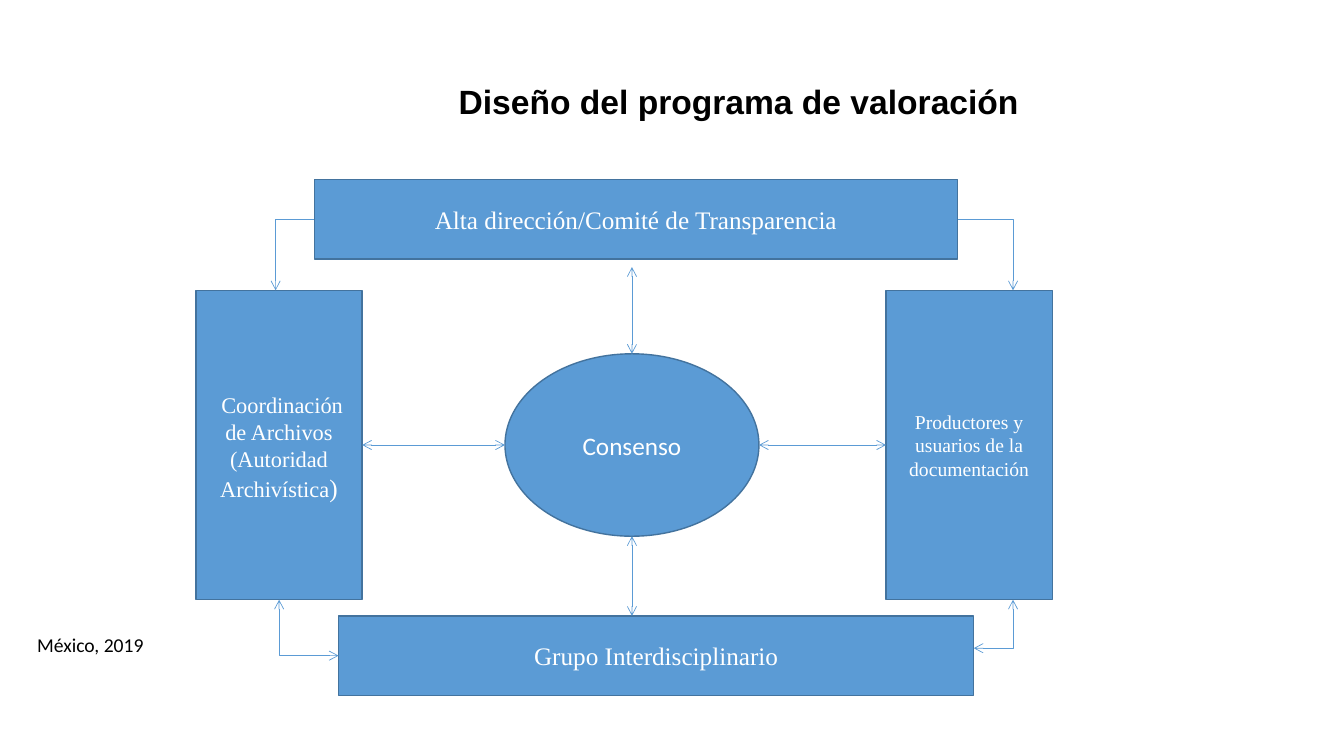
from lxml.etree import SubElement
from pptx import Presentation
from pptx.dml.color import RGBColor
from pptx.enum.shapes import MSO_CONNECTOR as Connector, MSO_SHAPE as Preset
from pptx.enum.text import MSO_ANCHOR as Anchor, MSO_AUTO_SIZE as AutoSize, PP_ALIGN as Align
from pptx.oxml.ns import qn
from pptx.util import Pt

COLORS = {"fill": "5B9BD5", "outline": "43739E", "light": "FFFFFF", "dark": "000000"}
SERIF = "Times New Roman"


def color(name):
    return RGBColor.from_string(COLORS[name])


def format_run(run, size, font, color_name, bold=False):
    run.font.size = Pt(size)
    run.font.name = font
    run.font.bold = bold
    run.font.color.rgb = color(color_name)


def place(shape, left, top, width, height):
    shape.left, shape.top = Pt(left), Pt(top)
    shape.width, shape.height = Pt(width), Pt(height)


def add_title(slide, text):
    title = slide.shapes.title
    place(title, 320.4, 54, 418.3, 36)
    frame = title.text_frame
    frame.text = text
    frame.word_wrap = False
    frame.auto_size = AutoSize.SHAPE_TO_FIT_TEXT
    frame.vertical_anchor = Anchor.TOP
    paragraph = frame.paragraphs[0]
    paragraph.alignment = Align.LEFT
    format_run(paragraph.runs[0], 24, "Arial", "dark", bold=True)


def add_node(slide, preset, box, pieces, font=SERIF):
    """Add a filled shape with centred text; pieces are (text, size) pairs."""
    node = slide.shapes.add_shape(preset, *map(Pt, box))
    node.shadow.inherit = False
    node.fill.solid()
    node.fill.fore_color.rgb = color("fill")
    node.line.color.rgb = color("outline")
    node.line.width = Pt(1)
    frame = node.text_frame
    frame.word_wrap = True
    frame.vertical_anchor = Anchor.MIDDLE
    paragraph = frame.paragraphs[0]
    paragraph.alignment = Align.CENTER
    for text, size in pieces:
        run = paragraph.add_run()
        run.text = text
        format_run(run, size, font, "light")


def add_arrow(slide, start, end, bent=False, both=True):
    """Add an arrow; a bent one leaves horizontally and arrives vertically."""
    kind = Connector.ELBOW if bent else Connector.STRAIGHT
    arrow = slide.shapes.add_connector(kind, *map(Pt, start + end))
    arrow.line.color.rgb = color("fill")
    arrow.line.width = Pt(0.5)
    properties = arrow.element.spPr
    if bent:
        properties.find(qn("a:prstGeom")).set("prst", "bentConnector2")
    line = properties.find(qn("a:ln"))
    for tag in ("a:headEnd", "a:tailEnd") if both else ("a:tailEnd",):
        SubElement(line, qn(tag)).set("type", "arrow")
    SubElement(properties, qn("a:effectLst"))


def add_caption(slide, text):
    caption = slide.shapes.add_textbox(Pt(19.4), Pt(448.6), Pt(168.5), Pt(24.5))
    frame = caption.text_frame
    frame.text = text
    frame.word_wrap = True
    frame.auto_size = AutoSize.SHAPE_TO_FIT_TEXT
    format_run(frame.paragraphs[0].runs[0], 14, "Calibri", "dark")


def main():
    presentation = Presentation()
    presentation.slide_width, presentation.slide_height = Pt(960), Pt(540)
    slide = presentation.slides.add_slide(presentation.slide_layouts[5])
    add_title(slide, "Diseño del programa de valoración")

    # Participants around the consensus: left, top, width, height
    coordination = (139.9, 207.4, 118.8, 221)
    direction = (224.6, 128.2, 459.4, 56.9)
    producers = (632.9, 207.4, 118.8, 221)
    group = (241.9, 439.9, 453.6, 56.9)
    consensus = (360.7, 252.7, 181.4, 130.3)
    add_node(slide, Preset.RECTANGLE, coordination, [
        (" ", 18),
        ("Coordinación de Archivos (Autoridad Archivística", 16),
        (")", 18),
    ])
    add_node(slide, Preset.RECTANGLE, direction,
             [("Alta dirección/Comité de Transparencia", 18)])
    add_node(slide, Preset.RECTANGLE, producers,
             [("Productores y usuarios de la documentación", 14)])
    add_node(slide, Preset.RECTANGLE, group, [("Grupo Interdisciplinario", 18)])
    add_node(slide, Preset.OVAL, consensus, [("Consenso", 18)], font="Calibri")

    # Edges shared by the arrows
    columns_top = coordination[1]
    columns_bottom = columns_top + coordination[3]
    direction_middle = direction[1] + direction[3] / 2
    direction_right = direction[0] + direction[2]
    group_right = group[0] + group[2]
    consensus_right = consensus[0] + consensus[2]
    consensus_bottom = consensus[1] + consensus[3]
    center_x = consensus[0] + consensus[2] / 2
    center_y = consensus[1] + consensus[3] / 2
    producers_x = 723.6

    # Bent arrows along the outside
    add_arrow(slide, (direction[0], direction_middle), (196.9, columns_top), bent=True, both=False)
    add_arrow(slide, (group[0], group[1] + group[3] / 2), (199.4, columns_bottom), bent=True)
    add_arrow(slide, (group_right, 463), (producers_x, columns_bottom), bent=True)
    add_arrow(slide, (direction_right, direction_middle), (producers_x, columns_top),
              bent=True, both=False)

    # Straight arrows to the consensus
    add_arrow(slide, (coordination[0] + coordination[2], center_y), (consensus[0], center_y))
    add_arrow(slide, (consensus_right, center_y), (producers[0], center_y))
    add_arrow(slide, (center_x, consensus_bottom), (center_x, group[1]))
    add_arrow(slide, (center_x, consensus[1]), (center_x, 190.8))

    add_caption(slide, "México, 2019")
    presentation.save("out.pptx")


if __name__ == "__main__":
    main()
